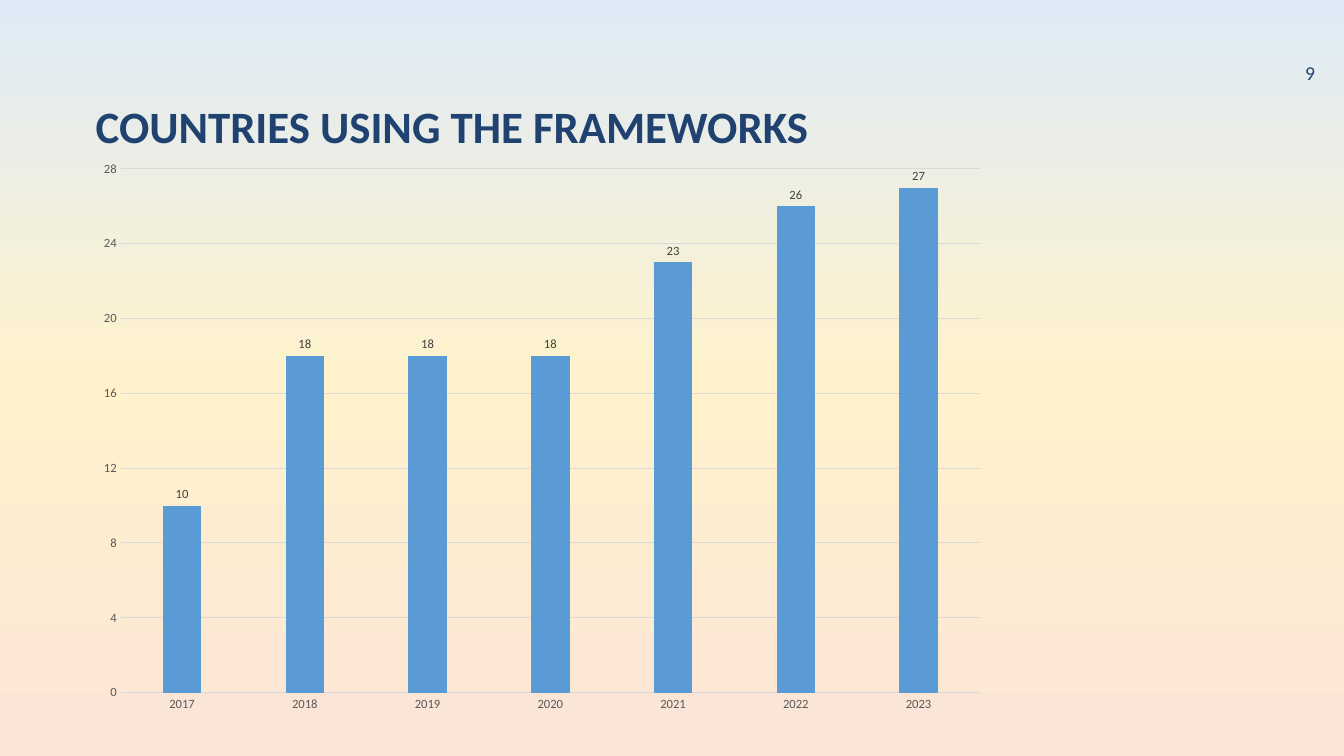
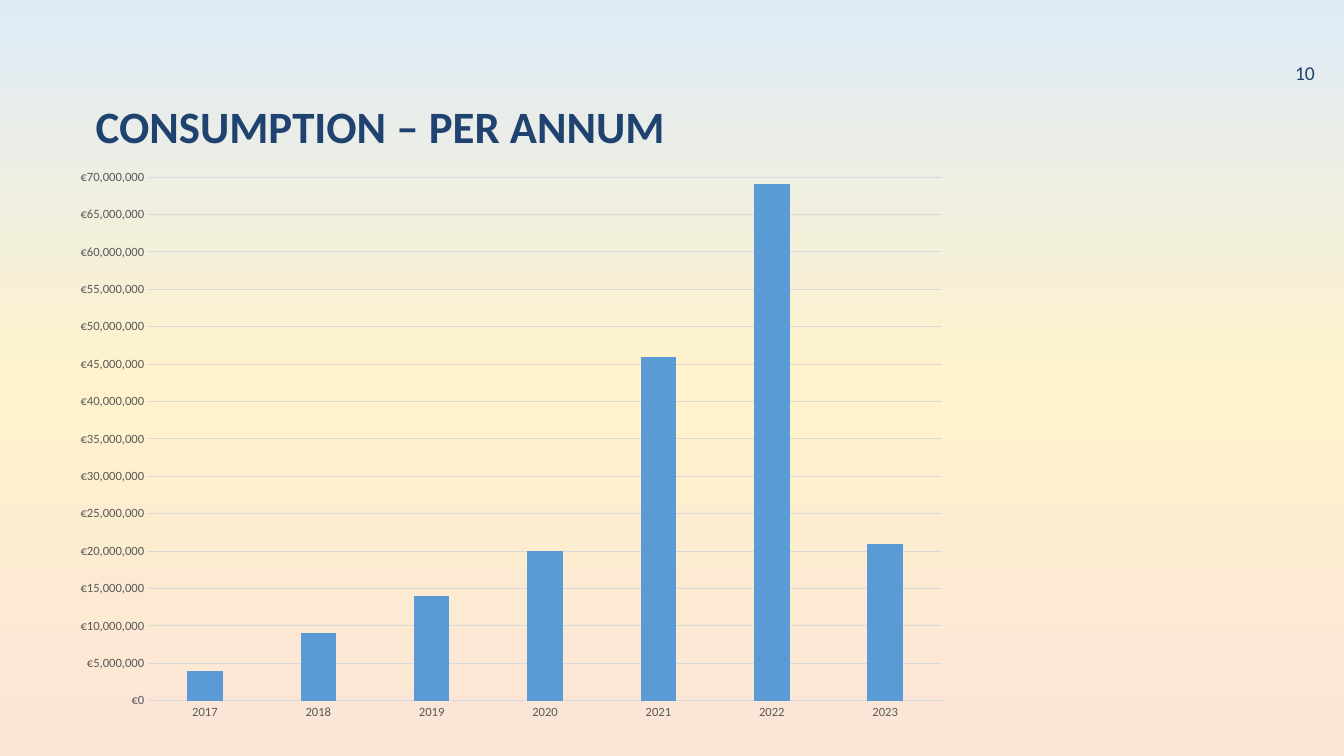
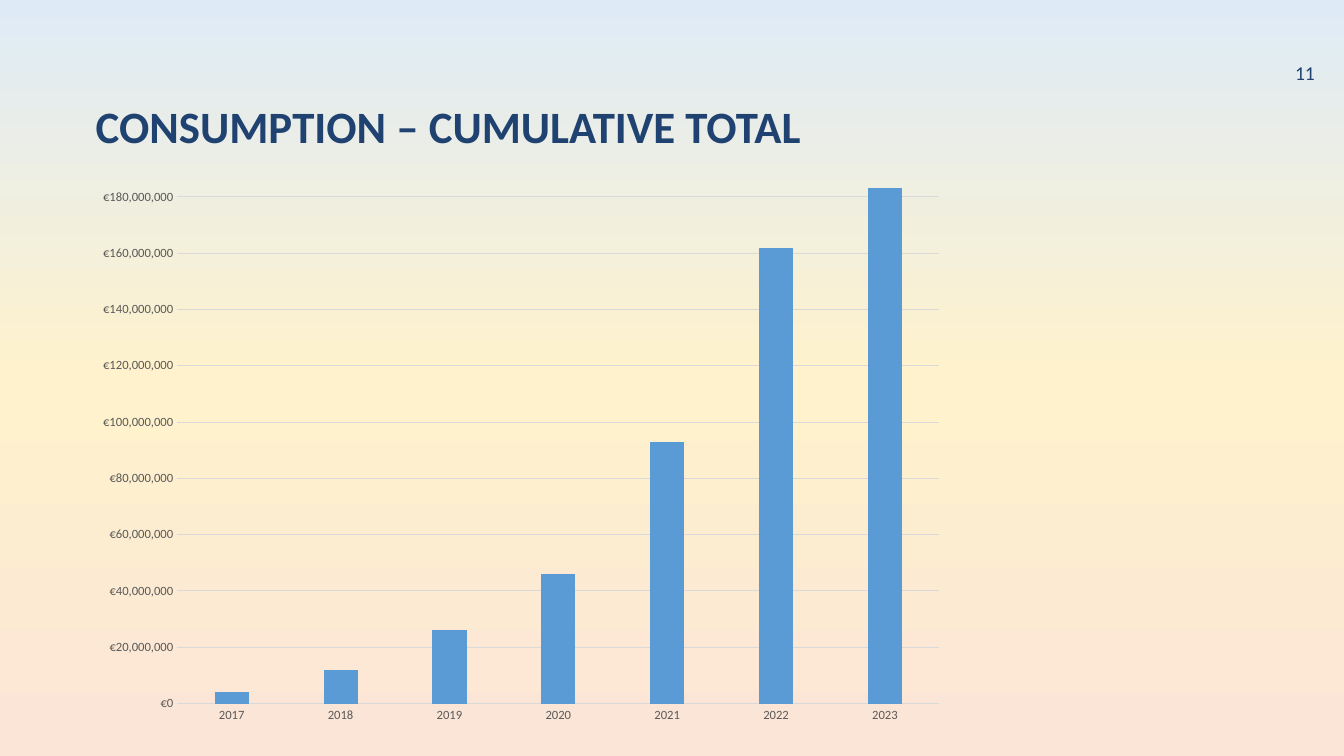
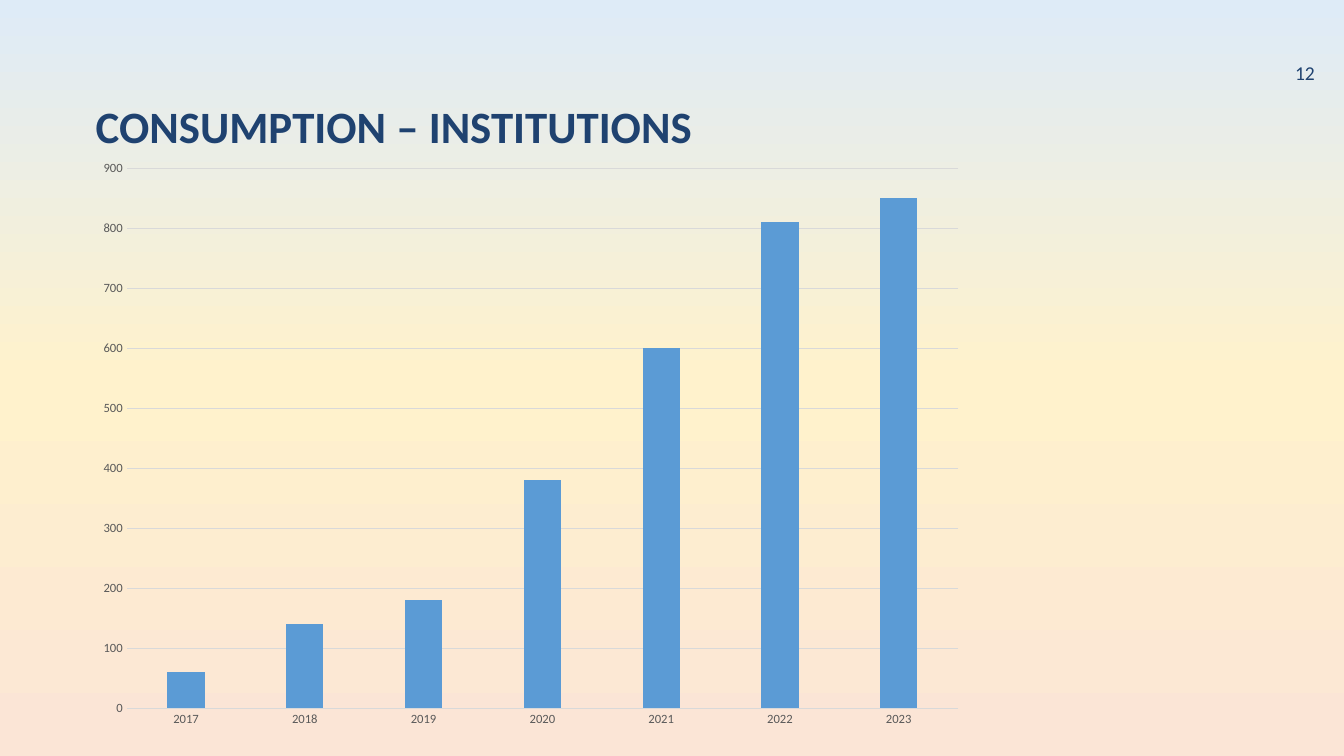
from copy import deepcopy
from dataclasses import dataclass
from typing import Optional

from pptx import Presentation
from pptx.chart.data import CategoryChartData
from pptx.dml.color import RGBColor
from pptx.enum.chart import XL_CHART_TYPE, XL_LABEL_POSITION, XL_TICK_MARK
from pptx.enum.text import MSO_ANCHOR, PP_ALIGN
from pptx.oxml.ns import qn
from pptx.util import Inches, Pt

COLUMN_CLUSTERED = XL_CHART_TYPE.COLUMN_CLUSTERED
OUTSIDE_END = XL_LABEL_POSITION.OUTSIDE_END
NO_TICK = XL_TICK_MARK.NONE
TOP, MIDDLE = MSO_ANCHOR.TOP, MSO_ANCHOR.MIDDLE
LEFT, RIGHT = PP_ALIGN.LEFT, PP_ALIGN.RIGHT

YEARS = ("2017", "2018", "2019", "2020", "2021", "2022", "2023")
FIRST_PAGE = 9
EURO = '"€"#,##0'


@dataclass(frozen=True)
class Theme:
    font: str = "Calibri"
    heading: str = "1F4270"
    bar: str = "5B9BD5"
    grid: str = "D9D9D9"
    axis_text: str = "595959"
    label_text: str = "404040"
    chart_text: str = "000000"
    background: tuple[str, ...] = ("DEEBF7", "FFF2CC", "FBE5D6")
    title_size: float = 32
    page_size: float = 14
    chart_size: float = 10
    axis_size: float = 9
    rule_width: float = 0.75


@dataclass(frozen=True)
class Box:
    left: float
    top: float
    width: float
    height: float

    def lengths(self) -> tuple:
        return tuple(map(Inches, (self.left, self.top, self.width, self.height)))


@dataclass(frozen=True)
class ChartSlide:
    title: str
    box: Box
    values: tuple[int, ...]
    maximum: int
    step: Optional[int] = None
    number_format: str = "General"
    labelled: bool = False


THEME = Theme()
PAGE_BOX = Box(12.52, 0.56, 0.62, 0.35)
TITLE_BOX = Box(0.85, 0.91, 10.82, 0.74)

CHART_SLIDES = (
    ChartSlide("COUNTRIES USING THE FRAMEWORKS", Box(0.85, 1.49, 9.05, 5.68),
               (10, 18, 18, 18, 23, 26, 27), 28, 4, labelled=True),
    ChartSlide("CONSUMPTION – PER ANNUM", Box(0.62, 1.57, 8.9, 5.68),
               (4_000_000, 9_000_000, 14_000_000, 20_000_000,
                46_000_000, 69_000_000, 21_000_000),
               70_000_000, 5_000_000, EURO),
    ChartSlide("CONSUMPTION – CUMULATIVE TOTAL", Box(0.85, 1.56, 8.64, 5.72),
               (4_000_000, 12_000_000, 26_000_000, 46_000_000,
                93_000_000, 162_000_000, 183_000_000),
               190_000_000, 20_000_000, EURO),
    ChartSlide("CONSUMPTION – INSTITUTIONS", Box(0.85, 1.48, 8.83, 5.85),
               (60, 140, 180, 380, 600, 810, 850), 900),
)


def style_font(font, size: float, color: str, bold: bool = False) -> None:
    font.name = THEME.font
    font.size = Pt(size)
    font.bold = bold
    font.color.rgb = RGBColor.from_string(color)


def style_line(line) -> None:
    line.color.rgb = RGBColor.from_string(THEME.grid)
    line.width = Pt(THEME.rule_width)


def paint_background(master) -> None:
    """Give the master a vertical three-stop gradient."""
    fill = master.background.fill
    fill.gradient()
    fill.gradient_angle = 270
    stop_list = master.element.find(".//" + qn("a:gsLst"))
    stop_list.append(deepcopy(stop_list[-1]))
    last = len(THEME.background) - 1
    for index, (stop, color) in enumerate(zip(fill.gradient_stops, THEME.background)):
        stop.position = index / last
        stop.color.rgb = RGBColor.from_string(color)


def add_text(slide, text: str, box: Box, size: float, bold: bool = False,
             align=LEFT, anchor=TOP, spacing: Optional[float] = None) -> None:
    text_frame = slide.shapes.add_textbox(*box.lengths()).text_frame
    text_frame.word_wrap = True
    text_frame.vertical_anchor = anchor
    text_frame.text = text
    paragraph = text_frame.paragraphs[0]
    paragraph.alignment = align
    paragraph.line_spacing = spacing
    style_font(paragraph.runs[0].font, size, THEME.heading, bold)


def add_column_chart(slide, content: ChartSlide) -> None:
    chart_data = CategoryChartData()
    chart_data.categories = YEARS
    chart_data.add_series("Series 1", content.values)
    chart = slide.shapes.add_chart(
        COLUMN_CLUSTERED, *content.box.lengths(), chart_data).chart
    chart.has_legend = False
    chart.has_title = False
    style_font(chart.font, THEME.chart_size, THEME.chart_text)

    # Axes
    category_axis, value_axis = chart.category_axis, chart.value_axis
    for axis in (category_axis, value_axis):
        axis.major_tick_mark = axis.minor_tick_mark = NO_TICK
        style_font(axis.tick_labels.font, THEME.axis_size, THEME.axis_text)
    style_line(category_axis.format.line)
    value_axis.format.line.fill.background()
    value_axis.has_major_gridlines = True
    style_line(value_axis.major_gridlines.format.line)
    value_axis.minimum_scale = 0
    value_axis.maximum_scale = content.maximum
    value_axis.major_unit = content.step
    value_axis.tick_labels.number_format = content.number_format
    value_axis.tick_labels.number_format_is_linked = False

    # Columns
    plot = chart.plots[0]
    plot.gap_width = 219
    plot.overlap = -27
    plot.vary_by_categories = False
    series = plot.series[0]
    series.format.fill.solid()
    series.format.fill.fore_color.rgb = RGBColor.from_string(THEME.bar)
    if content.labelled:
        labels = series.data_labels
        labels.show_value = True
        labels.position = OUTSIDE_END
        style_font(labels.font, THEME.axis_size, THEME.label_text)


def main() -> None:
    presentation = Presentation()
    presentation.slide_width = Inches(13.33)
    presentation.slide_height = Inches(7.5)
    paint_background(presentation.slide_master)
    blank_layout = presentation.slide_layouts[6]
    for page, content in enumerate(CHART_SLIDES, FIRST_PAGE):
        slide = presentation.slides.add_slide(blank_layout)
        add_text(slide, str(page), PAGE_BOX, THEME.page_size, align=RIGHT)
        add_text(slide, content.title, TITLE_BOX, THEME.title_size, bold=True,
                 anchor=MIDDLE, spacing=0.9)
        add_column_chart(slide, content)
    presentation.save("out.pptx")


if __name__ == "__main__":
    main()
